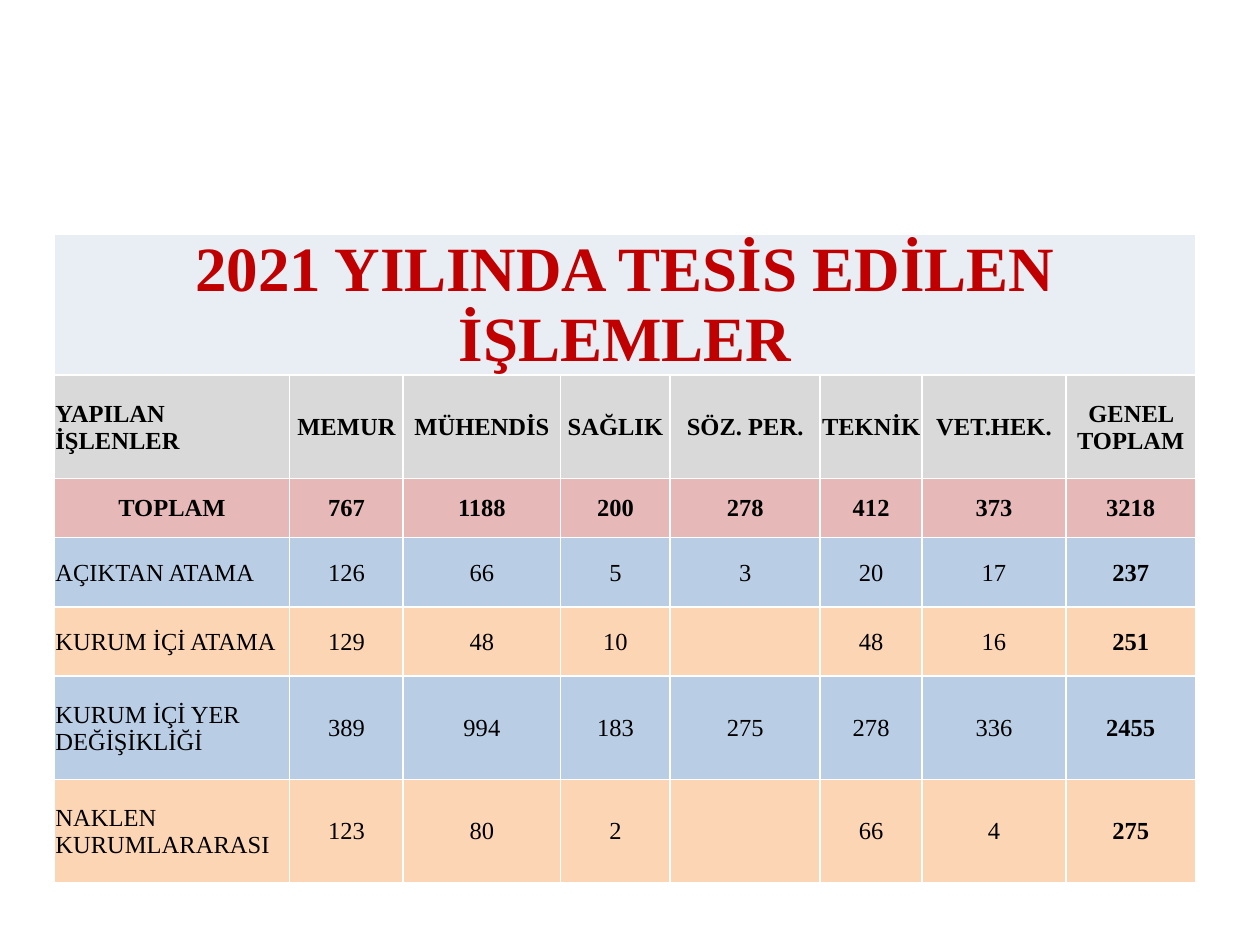
from pptx import Presentation
from pptx.dml.color import RGBColor
from pptx.enum import text
from pptx.util import Inches, Pt

FONT = "Times New Roman"
BLACK = RGBColor(0x00, 0x00, 0x00)
RED = RGBColor(0xC0, 0x00, 0x00)
PALE = RGBColor(0xE9, 0xED, 0xF4)
GREY = RGBColor(0xD9, 0xD9, 0xD9)
PINK = RGBColor(0xE6, 0xB9, 0xB8)
BLUE = RGBColor(0xB9, 0xCD, 0xE5)
ORANGE = RGBColor(0xFC, 0xD5, 0xB5)

TITLE = "2021 YILINDA TESİS EDİLEN İŞLEMLER"
COLUMN_WIDTHS = [1.87, 0.9, 1.25, 0.87, 1.19, 0.81, 1.14, 1.03]
ROW_HEIGHTS = [0.99, 0.82, 0.47, 0.55, 0.55, 0.82, 0.82]
HEADINGS = ["YAPILAN İŞLENLER", "MEMUR", "MÜHENDİS", "SAĞLIK",
            "SÖZ. PER.", "TEKNİK", "VET.HEK.", "GENEL TOPLAM"]
TOTALS = ["TOPLAM", "767", "1188", "200", "278", "412", "373", "3218"]
ACTIONS = [
    ["AÇIKTAN ATAMA", "126", "66", "5", "3", "20", "17", "237"],
    ["KURUM İÇİ ATAMA", "129", "48", "10", "", "48", "16", "251"],
    ["KURUM İÇİ YER DEĞİŞİKLİĞİ", "389", "994", "183", "275", "278", "336", "2455"],
    ["NAKLEN KURUMLARARASI", "123", "80", "2", "", "66", "4", "275"],
]


def add_grid(slide):
    """Add the empty table; its style draws the white cell borders."""
    frame = slide.shapes.add_table(
        len(ROW_HEIGHTS), len(COLUMN_WIDTHS), Inches(0.43), Inches(1.86),
        Inches(sum(COLUMN_WIDTHS)), Inches(sum(ROW_HEIGHTS)))
    table = frame.table
    table.first_row = False
    table.horz_banding = False
    for column, width in zip(table.columns, COLUMN_WIDTHS):
        column.width = Inches(width)
    for row, height in zip(table.rows, ROW_HEIGHTS):
        row.height = Inches(height)
    return table


def fill_cell(cell, content, fill, size=14, color=BLACK, bold=False, centred=True):
    cell.fill.solid()
    cell.fill.fore_color.rgb = fill
    cell.vertical_anchor = text.MSO_ANCHOR.MIDDLE
    cell.margin_left = cell.margin_right = cell.margin_top = Inches(0.01)
    cell.margin_bottom = 0
    paragraph = cell.text_frame.paragraphs[0]
    paragraph.alignment = text.PP_ALIGN.CENTER if centred else text.PP_ALIGN.LEFT
    if content:
        paragraph.text = content
        font = paragraph.runs[0].font
        font.name = FONT
        font.size = Pt(size)
        font.bold = bold
        font.color.rgb = color


def fill_title(table):
    title = table.cell(0, 0)
    title.merge(table.cell(0, len(COLUMN_WIDTHS) - 1))
    fill_cell(title, TITLE, PALE, size=36, color=RED, bold=True)


def fill_row(table, row, values, fill, bold=False, label_centred=False):
    """Fill one row; the grand total in the last column is always bold."""
    last = len(values) - 1
    for column, value in enumerate(values):
        fill_cell(table.cell(row, column), value, fill,
                  bold=bold or column == last,
                  centred=label_centred or column > 0)


def main():
    presentation = Presentation()
    presentation.slide_width = Inches(10)
    presentation.slide_height = Inches(7.5)
    slide = presentation.slides.add_slide(presentation.slide_layouts[6])

    table = add_grid(slide)
    fill_title(table)
    fill_row(table, 1, HEADINGS, GREY, bold=True)
    fill_row(table, 2, TOTALS, PINK, bold=True, label_centred=True)
    for index, values in enumerate(ACTIONS):
        fill_row(table, 3 + index, values, (BLUE, ORANGE)[index % 2])

    presentation.save("out.pptx")


if __name__ == "__main__":
    main()
